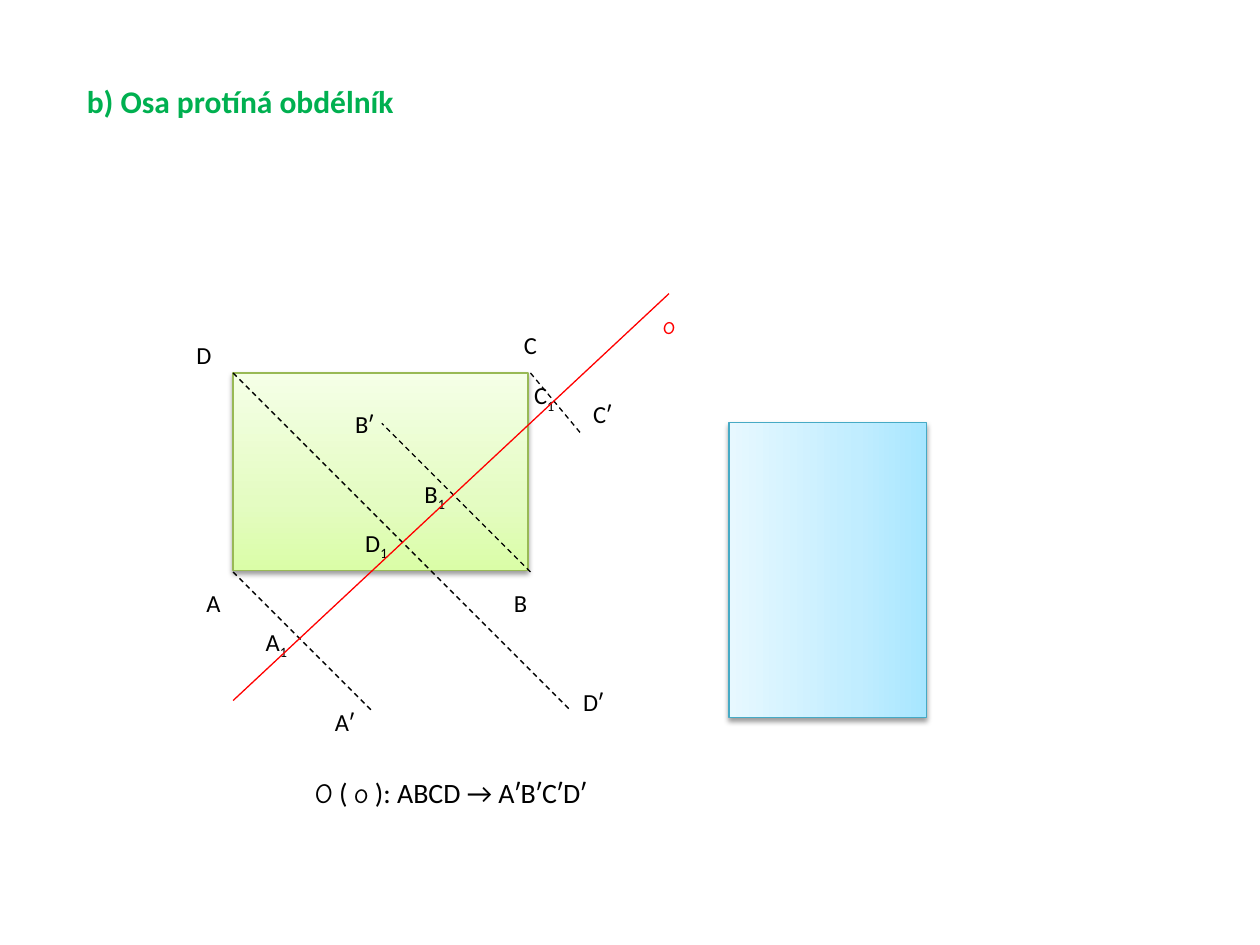
import copy
import pptx
import pptx.util
import pptx.dml.color
import pptx.enum.dml
import pptx.enum.shapes
import pptx.enum.text
import pptx.oxml
import pptx.oxml.ns
import pptx.oxml.xmlchemy

Inches = pptx.util.Inches
qn = pptx.oxml.ns.qn

THEME = {
    "ink": "000000", "axis": "FF0000", "title": "00B050",
    "green": ("98B955", ("DAFDA7", "E4FCC2", "F5FFE7")),
    "blue": ("46AAC5", ("A7E6FF", "C1EDFF", "E7F8FF")),
    "font": "Calibri", "script": "Comic Neue",
    "label": 14, "formula": 16, "heading": 18, "line": 0.75,
}
STOPS = (0, 0.35, 1)
RECT_SIZE = (2.34, 1.57)
RECTANGLES = [((1.85, 2.96), 0, "green"), ((5.4, 3.74), 270, "blue")]

PERPENDICULARS = [
    ((4.21, 2.96), (4.61, 3.44)),
    ((1.85, 4.54), (2.95, 5.64)),
    ((1.85, 2.96), (4.53, 5.64)),
    ((4.21, 4.54), (3.03, 3.36)),
]
AXIS = ((5.31, 2.33), (1.85, 5.56))

VERTICES = [("A", 1.54, 4.62), ("B", 3.98, 4.62), ("C", 4.06, 2.57), ("D", 1.46, 2.65)]
IMAGES = [("Aʹ", 2.56, 5.56), ("Bʹ", 2.72, 3.2), ("Cʹ", 4.61, 3.12), ("Dʹ", 4.53, 5.4)]
FEET = [("A", 2.01, 4.93), ("B", 3.27, 3.75), ("C", 4.14, 2.97), ("D", 2.8, 4.14)]
FORMULA = [("O", "script"), (" ( ", "font"), ("o", "script"), (" ): ABCD → AʹBʹCʹDʹ", "font")]

SHADOW = (
    '<a:effectLst xmlns:a="http://schemas.openxmlformats.org/drawingml/2006/main">'
    '<a:outerShdw blurRad="39370" dist="20320" dir="5400000" rotWithShape="0">'
    '<a:srgbClr val="000000"><a:alpha val="38000"/></a:srgbClr>'
    '</a:outerShdw></a:effectLst>'
)


def rgb(value):
    return pptx.dml.color.RGBColor.from_string(value)


def add_text(page, text, left, top, width, height=0.34, size="label", color="ink",
             font="font", bold=False, subscript="", wrap=False):
    box = page.shapes.add_textbox(*map(Inches, (left, top, width, height)))
    frame = box.text_frame
    frame.word_wrap = wrap
    frame.auto_size = pptx.enum.text.MSO_AUTO_SIZE.SHAPE_TO_FIT_TEXT
    para = frame.paragraphs[0]
    parts = [(text, font)] if isinstance(text, str) else list(text)
    if subscript:
        parts.append((subscript, font))
    for words, face in parts:
        span = para.add_run()
        span.text = words
        span.font.name = THEME[face]
        span.font.size = pptx.util.Pt(THEME[size])
        span.font.bold = bold
        span.font.color.rgb = rgb(THEME[color])
    if subscript:
        span._r.get_or_add_rPr().set("baseline", "-25000")


def add_line(page, start, end, color="ink", dashed=False):
    line = page.shapes.add_connector(
        pptx.enum.shapes.MSO_CONNECTOR.STRAIGHT, *map(Inches, start + end))
    line.line.color.rgb = rgb(THEME[color])
    line.line.width = pptx.util.Pt(THEME["line"])
    if dashed:
        line.line.dash_style = pptx.enum.dml.MSO_LINE.DASH
    line._element.spPr.append(pptx.oxml.xmlchemy.OxmlElement("a:effectLst"))


def add_rectangle(page, corner, rotation, palette):
    outline, colors = THEME[palette]
    shape = page.shapes.add_shape(
        pptx.enum.shapes.MSO_SHAPE.RECTANGLE, *map(Inches, corner + RECT_SIZE))
    shape.rotation = rotation
    shape.fill.gradient()
    shape.fill.gradient_angle = 90
    properties = shape._element.spPr
    stop_list = properties.find(".//" + qn("a:gsLst"))
    stop_list.append(copy.deepcopy(stop_list[0]))
    for stop, position, color in zip(shape.fill.gradient_stops, STOPS, colors):
        stop.position = position
        stop.color.rgb = rgb(color)
    shape.line.color.rgb = rgb(outline)
    shape.line.width = pptx.util.Pt(THEME["line"])
    properties.append(pptx.oxml.parse_xml(SHADOW))


def main():
    deck = pptx.Presentation()
    deck.slide_width, deck.slide_height = Inches(10), Inches(7.5)
    page = deck.slides.add_slide(deck.slide_layouts[6])

    for rectangle in RECTANGLES:
        add_rectangle(page, *rectangle)
    for start, end in PERPENDICULARS:
        add_line(page, start, end, dashed=True)
    for name, left, top in VERTICES:
        add_text(page, name, left, top, 0.32)
    for name, left, top in IMAGES:
        add_text(page, name, left, top, 0.36)
    for name, left, top in FEET:
        add_text(page, name, left, top, 0.38, subscript="1")
    add_line(page, *AXIS, color="axis")
    add_text(page, "o", 5.16, 2.41, 0.38, color="axis", font="script", wrap=True)
    add_text(page, FORMULA, 2.4, 6.11, 2.5, 0.37, size="formula")
    add_text(page, "b) Osa protíná obdélník", 0.59, 0.6, 2.72, 0.4,
             size="heading", color="title", bold=True)
    deck.save("out.pptx")


if __name__ == "__main__":
    main()
